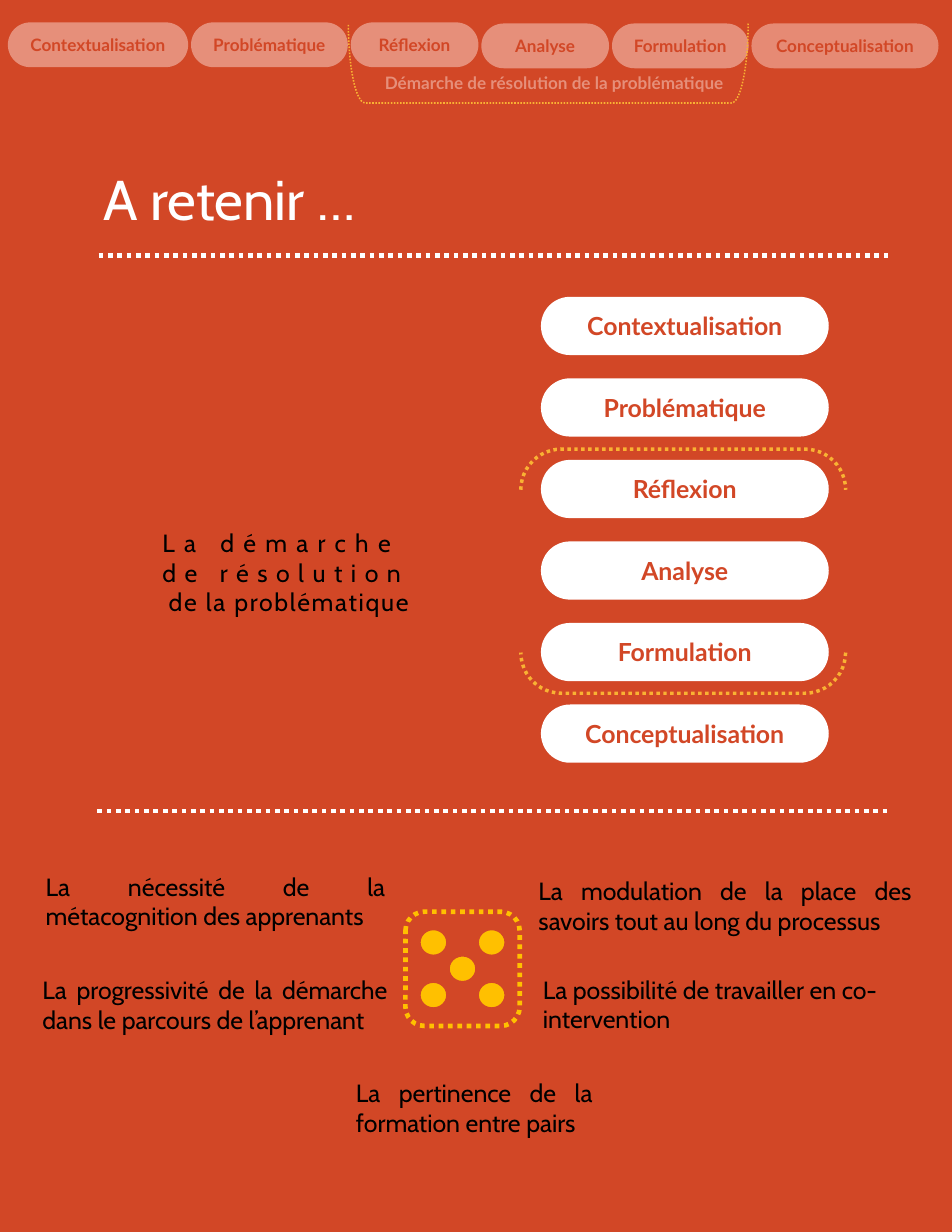
from pptx import Presentation
from pptx.dml.color import RGBColor
from pptx.enum.dml import MSO_LINE
from pptx.enum.shapes import MSO_CONNECTOR, MSO_SHAPE
from pptx.enum.text import MSO_ANCHOR, MSO_AUTO_SIZE, PP_ALIGN
from pptx.oxml.ns import qn
from pptx.util import Inches, Pt
from lxml import etree

ORANGE = RGBColor(0xD2, 0x47, 0x26)
SALMON = RGBColor(0xE6, 0x8F, 0x7A)
DARK_SALMON = RGBColor(0xE6, 0x8A, 0x74)
WHITE = RGBColor(0xFF, 0xFF, 0xFF)
BLACK = RGBColor(0, 0, 0)
AMBER = RGBColor(0xF9, 0xB2, 0x33)
GOLD = RGBColor(0xFF, 0xC0, 0x00)

LEFT, CENTER, JUSTIFY = PP_ALIGN.LEFT, PP_ALIGN.CENTER, PP_ALIGN.JUSTIFY
DOTTED = MSO_LINE.ROUND_DOT
GROW = MSO_AUTO_SIZE.SHAPE_TO_FIT_TEXT
TOP, MIDDLE = MSO_ANCHOR.TOP, MSO_ANCHOR.MIDDLE
ROUNDED, OVAL = MSO_SHAPE.ROUNDED_RECTANGLE, MSO_SHAPE.OVAL
RIGHT_BRACKET, BRACKET_PAIR = MSO_SHAPE.RIGHT_BRACKET, MSO_SHAPE.DOUBLE_BRACKET

STEPS = ["Contextualisation", "Problématique", "Réflexion",
         "Analyse", "Formulation", "Conceptualisation"]


def inches(box):
    return [Inches(length) for length in box]


def add_run(paragraph, text, font, size, color, bold=False, spacing=None):
    run = paragraph.add_run()
    run.text = text
    run.font.name = font
    run.font.size = Pt(size)
    run.font.bold = bold
    run.font.color.rgb = color
    if spacing is not None:
        run._r.get_or_add_rPr().set("spc", str(round(spacing * 100)))


def add_preset(slide, preset, box, fill=None, line=None, width=1, dash=None):
    shape = slide.shapes.add_shape(preset, *inches(box))
    shape.shadow.inherit = False
    if fill is None:
        shape.fill.background()
    else:
        shape.fill.solid()
        shape.fill.fore_color.rgb = fill
    if line is None:
        shape.line.fill.background()
    else:
        shape.line.color.rgb = line
        shape.line.width = Pt(width)
        shape.line.dash_style = dash
    return shape


def add_pill(slide, box, text, fill, size):
    pill = add_preset(slide, ROUNDED, box, fill)
    pill.adjustments[0] = 0.5
    frame = pill.text_frame
    frame.word_wrap = True
    frame.auto_size = GROW
    frame.vertical_anchor = MIDDLE
    frame.paragraphs[0].alignment = CENTER
    add_run(frame.paragraphs[0], text, "Lato", size, ORANGE, bold=True)


def add_turned_bracket(slide, preset, box, width):
    """Box is the visible area, after the quarter turn."""
    left, top, across, down = box
    frame = (left + (across - down) / 2, top + (down - across) / 2, down, across)
    bracket = add_preset(slide, preset, frame, line=AMBER, width=width, dash=DOTTED)
    bracket.rotation = 90
    return bracket


def add_text_frame(slide, box):
    frame = slide.shapes.add_textbox(*inches(box)).text_frame
    frame.word_wrap = True
    frame.auto_size = GROW
    return frame


def add_title(slide, box, text):
    title = slide.shapes.title
    title.left, title.top, title.width, title.height = inches(box)
    frame = title.text_frame
    frame.vertical_anchor = TOP
    frame.auto_size = GROW
    frame.paragraphs[0].alignment = LEFT
    add_run(frame.paragraphs[0], text, "Cabin", 36, WHITE)


def add_progress_bar(slide, box):
    left, top, width, height = box
    pill_widths = [1.61, 1.4, 1.14, 1.14, 1.22, 1.67]
    gap = (width - sum(pill_widths)) / (len(STEPS) - 1)
    for index, (step, pill_width) in enumerate(zip(STEPS, pill_widths)):
        pill_top = top if index < 3 else top + 0.01
        fill = DARK_SALMON if step == STEPS[-1] else SALMON
        add_pill(slide, (left, pill_top, pill_width, height), step, fill, 11)
        left += pill_width + gap


def add_resolution_group(slide, box):
    left, top, width, height = box
    frame = add_text_frame(slide, (left - 0.03, top + 0.39, width + 0.17, 0.29))
    frame.paragraphs[0].alignment = CENTER
    add_run(frame.paragraphs[0], "Démarche de résolution de la problématique",
            "Lato", 11, SALMON, bold=True)
    bracket = add_turned_bracket(slide, RIGHT_BRACKET, box, 1)
    bracket.adjustments[0] = 0.212


def add_step_column(slide, box):
    left, top, width, height = box
    pill_height = 0.52
    pitch = (height - pill_height) / (len(STEPS) - 1)
    for index, step in enumerate(STEPS):
        add_pill(slide, (left, top + index * pitch, width, pill_height), step, WHITE, 16)
    add_turned_bracket(slide, BRACKET_PAIR,
                       (left - 0.18, top + 1.36, width + 0.33, 2.18), 2.25)


def add_column_caption(slide, box):
    frame = add_text_frame(slide, box)
    first = frame.paragraphs[0]
    add_run(first, "La démarche ", "Cabin", 16, BLACK, spacing=6)
    first.add_line_break()
    add_run(first, "de résolution ", "Cabin", 16, BLACK, spacing=5.5)
    second = frame.add_paragraph()
    add_run(second, "de la problématique", "Cabin", 16, BLACK, spacing=1.1)
    for paragraph in frame.paragraphs:
        paragraph.alignment = CENTER


def add_separator(slide, left, top, width):
    line = slide.shapes.add_connector(
        MSO_CONNECTOR.STRAIGHT, *inches((left, top, left + width, top)))
    line.line.color.rgb = WHITE
    line.line.width = Pt(3)
    line.line.dash_style = DOTTED
    etree.SubElement(line._element.spPr, qn("a:effectLst"))


def add_die(slide, box):
    left, top, width, height = box
    add_preset(slide, ROUNDED, box, line=GOLD, width=3, dash=DOTTED)
    dot_width, dot_height = 0.27, 0.26
    for column, row in [(-1, -1), (1, -1), (0, 0), (-1, 1), (1, 1)]:
        dot_left = left + (width - dot_width) / 2 + column * 0.26
        dot_top = top + (height - dot_height) / 2 + row * 0.235
        add_preset(slide, OVAL, (dot_left, dot_top, dot_width, dot_height),
                   GOLD, ORANGE, 3)


def add_takeaway(slide, box, text, alignment=JUSTIFY):
    paragraph = add_text_frame(slide, box).paragraphs[0]
    paragraph.alignment = alignment
    add_run(paragraph, text, "Cabin", 16, BLACK)


def main():
    presentation = Presentation()
    presentation.slide_width = Inches(8.5)
    presentation.slide_height = Inches(11)
    slide = presentation.slides.add_slide(presentation.slide_layouts[5])
    slide.background.fill.solid()
    slide.background.fill.fore_color.rgb = ORANGE

    add_title(slide, (0.82, 1.42, 6.58, 0.71), "A retenir …")
    add_progress_bar(slide, (0.07, 0.2, 8.31, 0.4))
    add_resolution_group(slide, (3.11, 0.21, 3.57, 0.71))
    add_separator(slide, 0.88, 2.28, 7.07)
    add_step_column(slide, (4.83, 2.65, 2.57, 4.16))
    add_column_caption(slide, (1.05, 4.66, 3.06, 0.91))
    add_separator(slide, 0.87, 7.24, 7.07)
    add_die(slide, (3.62, 8.14, 1.02, 1.02))
    add_takeaway(slide, (0.31, 7.73, 3.23, 0.64),
                 "La nécessité de la métacognition des apprenants")
    add_takeaway(slide, (4.71, 7.77, 3.53, 0.64),
                 "La modulation de la place des savoirs tout au long du processus")
    add_takeaway(slide, (0.28, 8.65, 3.28, 0.91),
                 "La progressivité de la démarche dans le parcours de l’apprenant")
    add_takeaway(slide, (4.75, 8.65, 3.23, 0.64),
                 "La possibilité de travailler en co-intervention", LEFT)
    add_takeaway(slide, (3.08, 9.57, 2.31, 0.64),
                 "La pertinence de la formation entre pairs")
    presentation.save("out.pptx")


if __name__ == "__main__":
    main()
